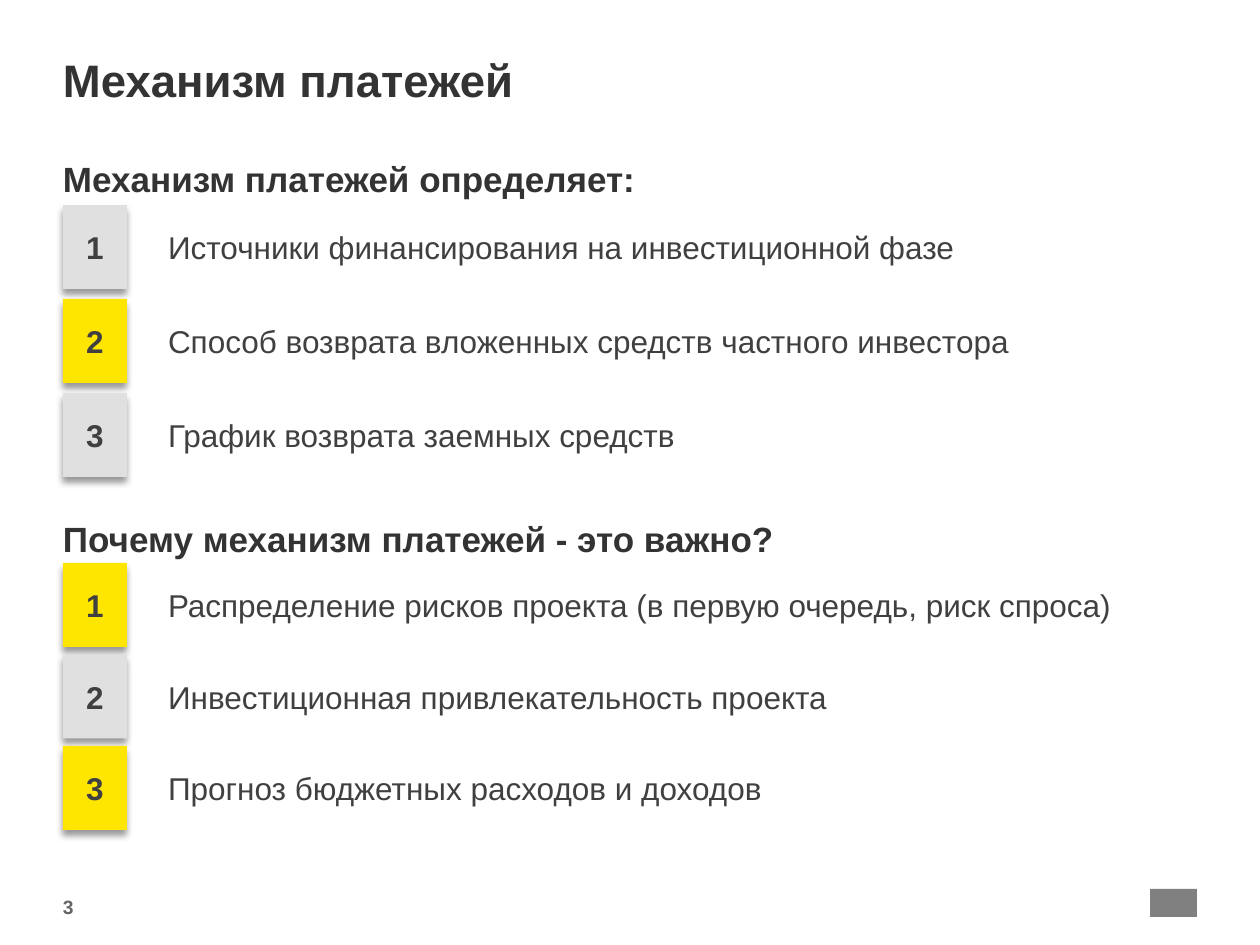
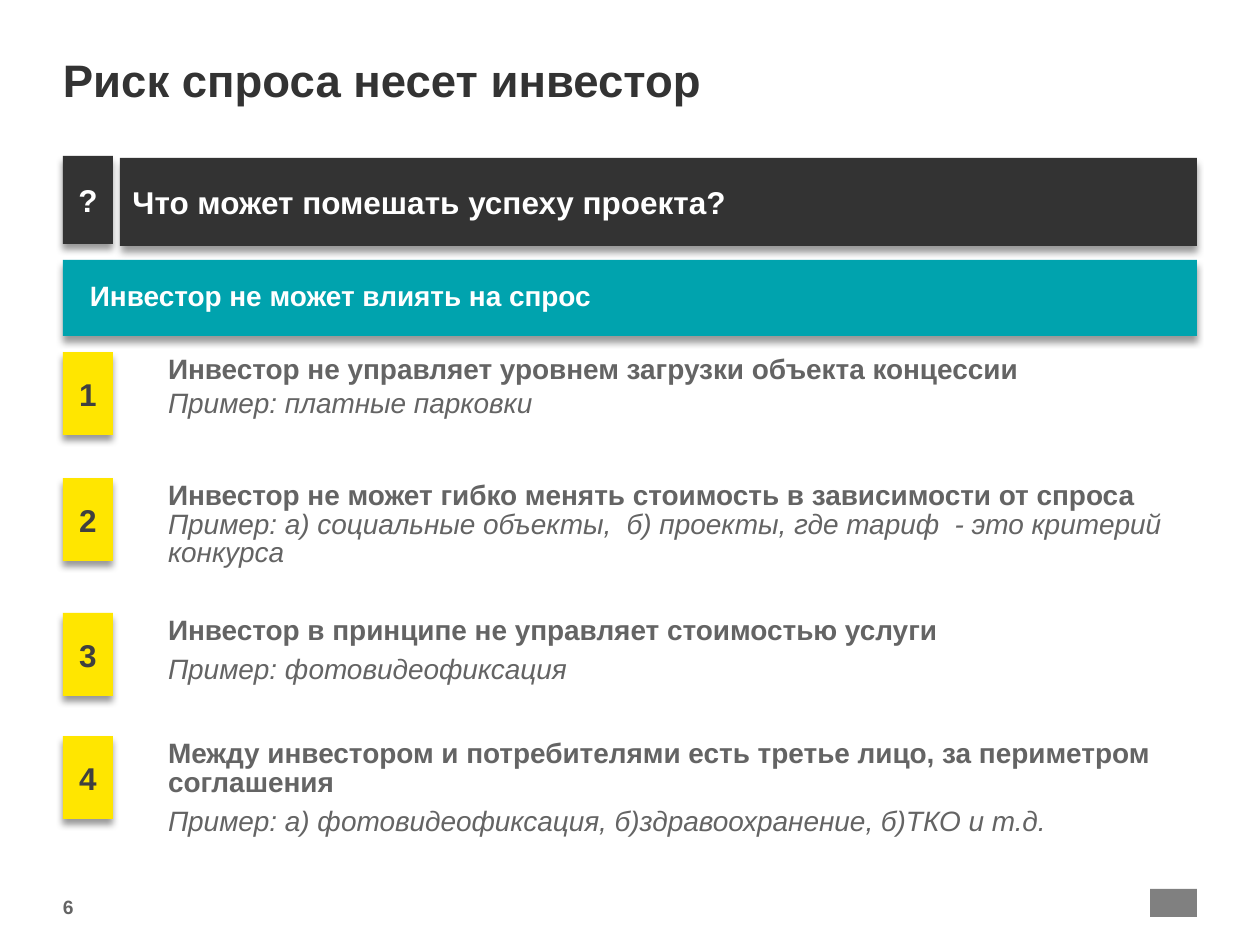
from lxml.etree import SubElement
from pptx import Presentation
from pptx.dml.color import RGBColor
from pptx.enum.shapes import MSO_SHAPE
from pptx.enum.text import MSO_ANCHOR, PP_ALIGN
from pptx.oxml.ns import qn
from pptx.util import Pt

# Content
GOALS = {
    "title": "Механизм платежей",
    "page": "3",
    "parts": [
        # heading, its top and height, first row top, row step, tile colours
        ("Механизм платежей определяет:", 123, 118, 205, 94, ("grey", "yellow"), [
            "Источники финансирования на инвестиционной фазе",
            "Способ возврата вложенных средств частного инвестора",
            "График возврата заемных средств"]),
        ("Почему механизм платежей - это важно?", 498, 87, 563, 91.5, ("yellow", "grey"), [
            "Распределение рисков проекта (в первую очередь, риск спроса)",
            "Инвестиционная привлекательность проекта",
            "Прогноз бюджетных расходов и доходов"]),
    ],
}
RISKS = {
    "title": "Риск спроса несет инвестор",
    "page": "6",
    "ask": "Что может помешать успеху проекта?",
    "band": "Инвестор не может влиять на спрос",
    "rows": [
        # top, text height, reason, example, its line spacing and space before
        (352, 68, "Инвестор не управляет уровнем загрузки объекта концессии",
         "Пример: платные парковки", 1, 0),
        (478, 92, "Инвестор не может гибко менять стоимость в зависимости от спроса",
         "Пример: а) социальные объекты,  б) проекты, где тариф  - это критерий конкурса", 0.85, 0),
        (613, 73, "Инвестор в принципе не управляет стоимостью услуги",
         "Пример: фотовидеофиксация", 0.85, 6),
        (736, 102, "Между инвестором и потребителями есть третье лицо, за периметром соглашения",
         "Пример: а) фотовидеофиксация, б)здравоохранение, б)ТКО и т.д.", 0.85, 6),
    ],
}

# Shared look
FONT = "Arial"
INK = {"dark": "333333", "text": "404040", "soft": "646464", "white": "FFFFFF",
       "yellow": "FFE600", "grey": "E0E0E0", "teal": "00A3AE", "mark": "808080"}
LEFT, WIDTH = 63, 1134
TIGHT = 0.85


def px(n):
    return round(n * 914400 / 126)


def tint(name):
    return RGBColor.from_string(INK[name])


def style(par, size, color, bold=False, italic=False, line=TIGHT, before=0, after=0):
    par.line_spacing = line
    par.space_before, par.space_after = Pt(before), Pt(after)
    for run in par.runs:
        font = run.font
        font.name, font.size, font.bold, font.italic = FONT, Pt(size), bold, italic
        font.color.rgb = tint(color)


def inset(frame, left, top, right, bottom):
    frame.margin_left, frame.margin_top = px(left), px(top)
    frame.margin_right, frame.margin_bottom = px(right), px(bottom)


def label(slide, spot, lines, top=0, middle=True):
    """Add a text box and return its paragraphs."""
    frame = slide.shapes.add_textbox(*map(px, spot)).text_frame
    frame.word_wrap = True
    inset(frame, 0, top, 0, 0)
    frame.vertical_anchor = MSO_ANCHOR.MIDDLE if middle else MSO_ANCHOR.TOP
    frame.text = "\n".join(lines)
    return frame.paragraphs


def block(slide, spot, fill):
    shape = slide.shapes.add_shape(MSO_SHAPE.RECTANGLE, *map(px, spot))
    shape.shadow.inherit = False
    shape.fill.solid()
    shape.fill.fore_color.rgb = tint(fill)
    shape.line.fill.background()
    return shape


def tile(slide, spot, fill, text, color="text", size=18, align=PP_ALIGN.CENTER):
    """Add a filled box with a soft shadow below it; return its text frame."""
    shape = block(slide, spot, fill)
    glow = SubElement(shape._element.spPr.find(qn("a:effectLst")), qn("a:outerShdw"),
                      blurRad=str(Pt(4)), dist=str(Pt(3)), dir="5400000",
                      algn="t", rotWithShape="0")
    shade = SubElement(glow, qn("a:srgbClr"), val="000000")
    SubElement(shade, qn("a:alpha"), val="40000")
    frame = shape.text_frame
    frame.word_wrap = True
    frame.vertical_anchor = MSO_ANCHOR.MIDDLE
    frame.text = text
    par = frame.paragraphs[0]
    par.alignment = align
    style(par, size, color, bold=True, line=1)
    return frame


def start(deck, data):
    """Add a slide with title, page number and corner mark."""
    slide = deck.slides.add_slide(deck.slide_layouts[6])
    style(label(slide, (LEFT, 25, WIDTH, 118), [data["title"]])[0], 26, "dark", bold=True)
    page = label(slide, (LEFT, 895, 100, 28), [data["page"]], middle=False)
    style(page[0], 11, "soft", bold=True, line=1)
    block(slide, (1150, 889, 47, 28), "mark")
    return slide


def goals(deck):
    slide = start(deck, GOALS)
    for head, top, high, first, step, fills, rows in GOALS["parts"]:
        style(label(slide, (LEFT, top, WIDTH, high), [head])[0], 20, "dark", bold=True)
        for i, row in enumerate(rows):
            y = first + i * step
            tile(slide, (LEFT, y, 64, 84), fills[i % 2], str(i + 1))
            par = label(slide, (168, y - 0.5, 1013, 86), [row], top=5)[0]
            style(par, 18, "text", after=6)


def risks(deck):
    slide = start(deck, RISKS)

    # Question and band
    tile(slide, (LEFT, 156, 50, 88), "dark", "?", "white")
    tile(slide, (120, 158, 1077, 88), "dark", RISKS["ask"], "white", align=PP_ALIGN.LEFT)
    frame = tile(slide, (LEFT, 260, WIDTH, 76), "teal", RISKS["band"], "white", 16, PP_ALIGN.LEFT)
    inset(frame, 2, 2, 2, 2)
    par = frame.paragraphs[0]
    par._p.get_or_add_pPr().set("marL", str(px(25)))
    style(par, 16, "white", bold=True, after=6)

    # Numbered reasons
    for i, (top, high, why, case, line, gap) in enumerate(RISKS["rows"], 1):
        tile(slide, (LEFT, top, 50, 83), "yellow", str(i))
        pars = label(slide, (168, top, 1029, high), [why, case], top=5, middle=False)
        style(pars[0], 16, "soft", bold=True)
        style(pars[1], 16, "soft", italic=True, line=line, before=gap, after=6)


def main():
    deck = Presentation()
    deck.slide_width, deck.slide_height = px(1260), px(945)
    goals(deck)
    risks(deck)
    deck.save("out.pptx")


if __name__ == "__main__":
    main()
